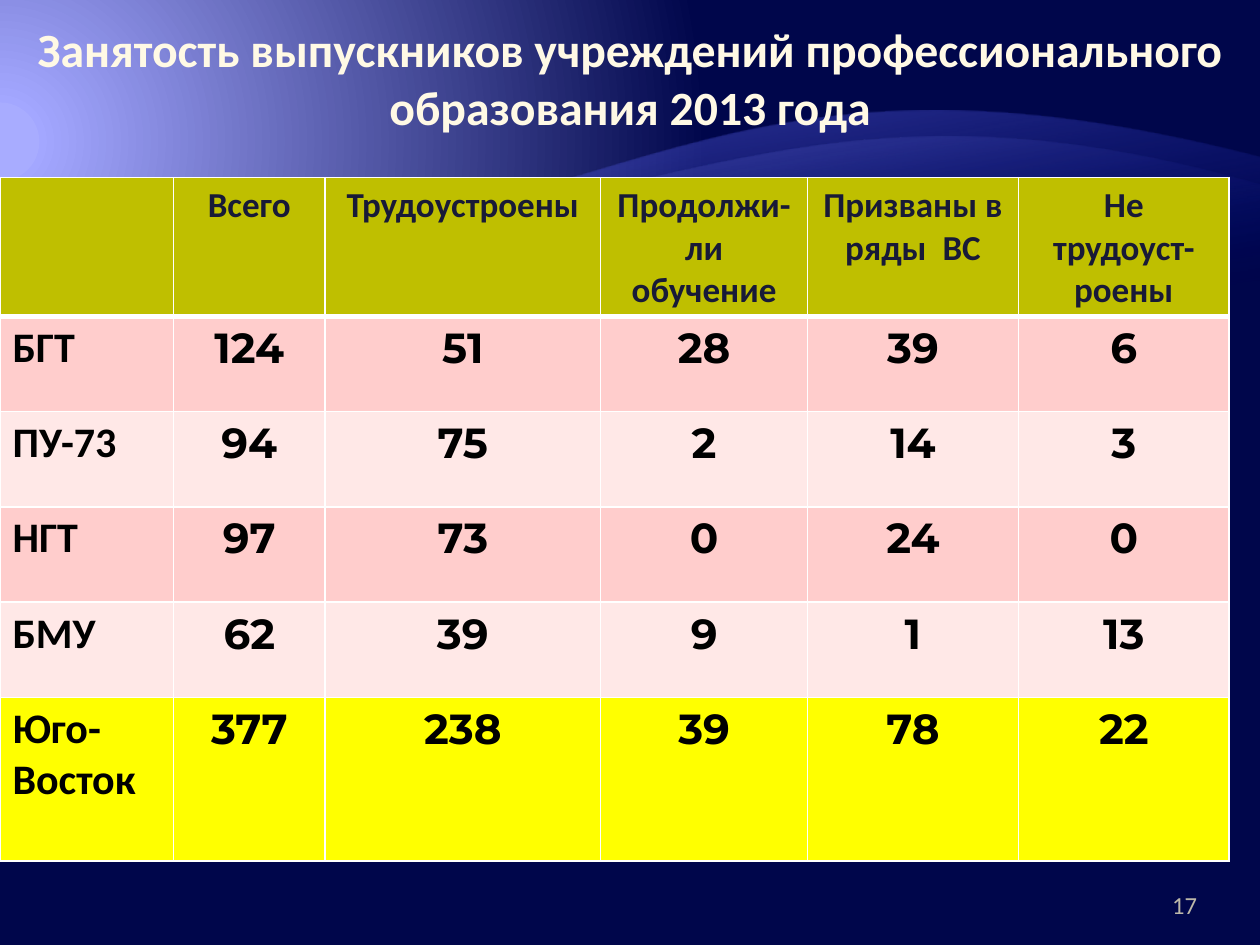
from dataclasses import dataclass
from typing import NamedTuple, Optional

import lxml.etree
import pptx
import pptx.dml.color
import pptx.enum.text
import pptx.oxml.ns
import pptx.slide
import pptx.table
import pptx.text.text
import pptx.util

Cm = pptx.util.Cm
Pt = pptx.util.Pt
Align = pptx.enum.text.PP_ALIGN
Anchor = pptx.enum.text.MSO_ANCHOR
qn = pptx.oxml.ns.qn


class TextStyle(NamedTuple):
    font: str
    size: float
    color: str
    bold: bool = True
    align: Optional[Align] = Align.CENTER


class Stop(NamedTuple):
    position: int
    color: str
    alpha: int = 100


class Point(NamedTuple):
    x: float
    y: float


@dataclass(frozen=True)
class Theme:
    title: TextStyle = TextStyle("Calibri", 27.3, "FFF9E5")
    header: TextStyle = TextStyle("Calibri", 20, "181A37")
    label: TextStyle = TextStyle("Calibri", 24, "000000", align=None)
    number: TextStyle = TextStyle("Montserrat", 24, "000000")
    page_number: TextStyle = TextStyle("Calibri", 14, "BDB8A9", False, Align.RIGHT)
    title_outline: str = "8F8462"
    border: str = "FFFFFF"
    header_fill: str = "BFBF00"
    band_fills: tuple[str, str] = ("FFCDCC", "FFE8E7")
    total_fill: str = "FFFF00"
    background: tuple[Stop, ...] = (
        Stop(5, "A8ACFF"), Stop(5, "A3A7FF"), Stop(90, "00064B"))


@dataclass(frozen=True)
class Wave:
    start: Point
    controls: tuple[Point, Point]
    end: Point
    bottom: float
    stops: tuple[Stop, Stop]


@dataclass(frozen=True)
class TextBox:
    text: str
    left: float
    top: float
    width: float
    height: float
    style: TextStyle
    anchor: Anchor
    right_inset: float = 0.25


THEME = Theme()
WAVES = (
    Wave(Point(0, 5.41), (Point(12.7, 5.41), Point(13.56, 0.13)), Point(25.4, 3.18),
         18.62, (Stop(65, "000D9E", 0), Stop(100, "797FFF", 55))),
    Wave(Point(0, 5.41), (Point(12.7, 5.41), Point(15.19, 0.79)), Point(25.4, 3.73),
         16.18, (Stop(65, "000D9E", 0), Stop(100, "A3A7FF", 30))),
)
TITLE = TextBox("Занятость выпускников учреждений профессионального образования 2013 года",
                0.5, 0.2, 24.4, 2.72, THEME.title, Anchor.MIDDLE)
PAGE_NUMBER = TextBox("17", 22.66, 17.65, 1.47, 1.02, THEME.page_number,
                      Anchor.BOTTOM, 0)
COLUMN_WIDTHS = (3.5, 3.05, 5.56, 4.17, 4.25, 4.25)
ROW_HEIGHT, TOTAL_HEIGHT = 1.92, 3.3
HEADERS = ("", "Всего", "Трудоустроены", "Продолжи-ли обучение",
           "Призваны в ряды  ВС", "Не трудоуст-роены")
GRADUATES = (
    ("БГТ", 124, 51, 28, 39, 6),
    ("ПУ-73", 94, 75, 2, 14, 3),
    ("НГТ", 97, 73, 0, 24, 0),
    ("БМУ", 62, 39, 9, 1, 13),
    ("Юго-Восток", 377, 238, 39, 78, 22),
)


def add_node(parent, tag: str, **attributes):
    values = {name: str(value) for name, value in attributes.items()}
    return lxml.etree.SubElement(parent, qn(tag), values)


def add_line_color(line, color: str) -> None:
    add_node(add_node(line, "a:solidFill"), "a:srgbClr", val=color)


def reset_gradient(gradient, stops: tuple[Stop, ...]) -> None:
    for child in list(gradient):
        gradient.remove(child)
    stop_list = add_node(gradient, "a:gsLst")
    for stop in stops:
        node = add_node(stop_list, "a:gs", pos=stop.position * 1000)
        color = add_node(node, "a:srgbClr", val=stop.color)
        if stop.alpha < 100:
            add_node(color, "a:alpha", val=stop.alpha * 1000)


def paint_background(page: pptx.slide.Slide) -> None:
    page.background.fill.gradient()
    gradient = page.element.find(".//" + qn("a:gradFill"))
    reset_gradient(gradient, THEME.background)
    circle = add_node(gradient, "a:path", path="circle")
    add_node(circle, "a:fillToRect", l=20000, t=30000, r=135000, b=100000)


def draw_wave(page: pptx.slide.Slide, wave: Wave) -> None:
    right, left = wave.end.x, wave.start.x
    corners = [(left, wave.bottom), wave.start, wave.end]
    builder = page.shapes.build_freeform(Cm(right), Cm(wave.bottom))
    builder.add_line_segments([(Cm(x), Cm(y)) for x, y in corners], close=True)
    shape = builder.convert_to_shape()
    shape.shadow.inherit = False
    shape.line.fill.background()
    shape.fill.gradient()

    crest = shape.element.findall(".//" + qn("a:lnTo"))[-1]
    curve = lxml.etree.Element(qn("a:cubicBezTo"))
    for x, y in (*wave.controls, wave.end):
        add_node(curve, "a:pt", x=Cm(x - left), y=Cm(y - wave.end.y))
    crest.getparent().replace(crest, curve)

    gradient = shape.element.spPr.find(qn("a:gradFill"))
    reset_gradient(gradient, wave.stops)
    add_node(gradient, "a:lin", ang=260 * 60000, scaled=0)


def write(frame: pptx.text.text.TextFrame, text: str, style: TextStyle):
    para = frame.paragraphs[0]
    para.alignment = style.align
    span = para.add_run()
    span.text = text
    span.font.name = style.font
    span.font.size = Pt(style.size)
    span.font.bold = style.bold
    span.font.color.rgb = pptx.dml.color.RGBColor.from_string(style.color)
    return span


def draw_text(page: pptx.slide.Slide, item: TextBox):
    box = page.shapes.add_textbox(Cm(item.left), Cm(item.top),
                                  Cm(item.width), Cm(item.height))
    frame = box.text_frame
    frame.word_wrap = True
    frame.vertical_anchor = item.anchor
    frame.margin_right = Cm(item.right_inset)
    return write(frame, item.text, item.style)


def outline_text(span, color: str) -> None:
    properties = span.font._element
    line = add_node(properties, "a:ln", w=Pt(0.04))
    add_line_color(line, color)
    properties.insert(0, line)


def style_cell(cell: pptx.table._Cell, color: str, top: int, bottom: int) -> None:
    cell.fill.solid()
    cell.fill.fore_color.rgb = pptx.dml.color.RGBColor.from_string(color)
    properties = cell._tc.get_or_add_tcPr()
    borders = (("a:lnL", 1), ("a:lnR", 1), ("a:lnT", top), ("a:lnB", bottom))
    for index, (side, width) in enumerate(borders):
        line = add_node(properties, side, w=Pt(width))
        add_line_color(line, THEME.border)
        properties.insert(index, line)


def draw_table(page: pptx.slide.Slide) -> None:
    rows = (HEADERS, *GRADUATES)
    last = len(rows) - 1
    heights = [ROW_HEIGHT] * last + [TOTAL_HEIGHT]
    table = page.shapes.add_table(len(rows), len(HEADERS), Cm(0), Cm(3.58),
                                  Cm(sum(COLUMN_WIDTHS)), Cm(sum(heights))).table
    for column, width in zip(table.columns, COLUMN_WIDTHS):
        column.width = Cm(width)
    bands = [THEME.band_fills[index % 2] for index in range(last - 1)]
    fills = [THEME.header_fill, *bands, THEME.total_fill]
    for row_index, values in enumerate(rows):
        table.rows[row_index].height = Cm(heights[row_index])
        for column_index, value in enumerate(values):
            cell = table.cell(row_index, column_index)
            style_cell(cell, fills[row_index], top=3 if row_index == 1 else 1,
                       bottom=3 if row_index == 0 else 1)
            if row_index == 0:
                style = THEME.header
            else:
                style = THEME.number if column_index else THEME.label
            if value != "":
                write(cell.text_frame, str(value), style)


def main() -> None:
    deck = pptx.Presentation()
    deck.slide_width, deck.slide_height = Cm(25.4), Cm(19.05)
    page = deck.slides.add_slide(deck.slide_layouts[6])
    paint_background(page)
    for wave in WAVES:
        draw_wave(page, wave)
    outline_text(draw_text(page, TITLE), THEME.title_outline)
    draw_table(page)
    draw_text(page, PAGE_NUMBER)
    deck.save("out.pptx")


if __name__ == "__main__":
    main()
